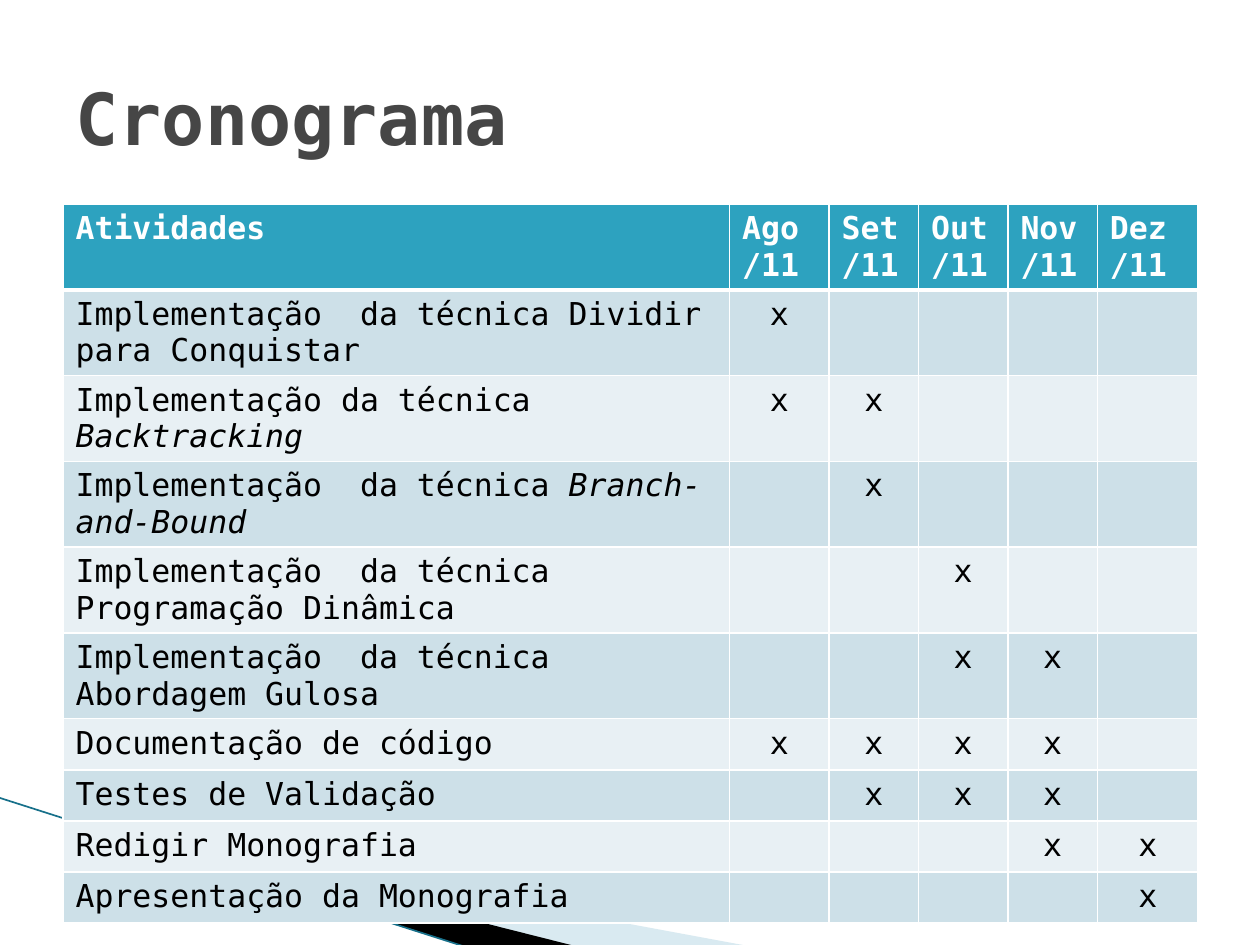
from lxml.etree import SubElement
from pptx import Presentation
from pptx.dml.color import RGBColor
from pptx.enum.shapes import MSO_CONNECTOR
from pptx.enum.text import MSO_ANCHOR, PP_ALIGN
from pptx.oxml.ns import qn
from pptx.util import Inches, Pt

FONT = "DejaVu Sans Mono"
WHITE, BLACK, GREY, TEAL = "FFFFFF", "000000", "464646", "2DA2BF"
BANDS = ["CDE0E8", "E8F0F4"]
MARGIN, CONTENT_WIDTH = 0.5, 9
COLUMN_WIDTHS = [5.29, 0.79, 0.71, 0.71, 0.71, 0.8]
ROW_HEIGHT = Pt(29.2)
MONTHS = ["Ago", "Set", "Out", "Nov", "Dez"]
ACTIVITIES = [
    ("Implementação  da técnica Dividir para Conquistar", "", ["Ago"]),
    ("Implementação da técnica ", "Backtracking", ["Ago", "Set"]),
    ("Implementação  da técnica ", "Branch-and-Bound", ["Set"]),
    ("Implementação  da técnica  Programação Dinâmica", "", ["Out"]),
    ("Implementação  da técnica  Abordagem Gulosa", "", ["Out", "Nov"]),
    ("Documentação de código", "", ["Ago", "Set", "Out", "Nov"]),
    ("Testes de Validação", "", ["Set", "Out", "Nov"]),
    ("Redigir Monografia", "", ["Nov", "Dez"]),
    ("Apresentação da Monografia", "", ["Dez"]),
]


def color(hex_value):
    """Turn a hex string into a colour."""
    return RGBColor.from_string(hex_value)


def format_font(font, size, hex_value, bold=False):
    """Apply the deck's typeface with a size, colour and weight."""
    font.name, font.size, font.bold = FONT, Pt(size), bold
    font.color.rgb = color(hex_value)


def add_wedge(slide, points, hex_value, alpha=100):
    """Draw a filled, unlined wedge through points given in inches."""
    start, *corners = [(Inches(x), Inches(y)) for x, y in points]
    builder = slide.shapes.build_freeform(*start)
    builder.add_line_segments(corners, close=True)
    wedge = builder.convert_to_shape()
    wedge.shadow.inherit = False
    wedge.line.fill.background()
    wedge.fill.solid()
    wedge.fill.fore_color.rgb = color(hex_value)
    if alpha < 100:
        solid = wedge._element.spPr.find(qn("a:solidFill"))
        SubElement(solid[0], qn("a:alpha"), val=str(alpha * 1000))


def add_corner_decoration(slide):
    """Draw the slanted wedges and the line of the lower left corner."""
    add_wedge(slide, [(0.55, 6.51), (5.95, 7.51), (4.56, 7.51), (0.55, 6.5)], "A0CBDC", 40)
    add_wedge(slide, [(0.53, 6.49), (4.57, 7.51), (3.72, 7.52), (0.54, 6.5)], BLACK)
    edge = slide.shapes.add_connector(
        MSO_CONNECTOR.STRAIGHT, Inches(-0.01), Inches(6.33), Inches(3.71), Inches(7.52))
    edge.line.color.rgb = color("17708A")
    edge.line.width = Pt(0.95)
    SubElement(edge._element.spPr, qn("a:effectLst"))


def add_title(slide, left, top, width, height):
    """Place and format the title placeholder."""
    title = slide.shapes.title
    title.left, title.top, title.width, title.height = map(Inches, (left, top, width, height))
    frame = title.text_frame
    frame.text = "Cronograma"
    frame.vertical_anchor = MSO_ANCHOR.MIDDLE
    frame.paragraphs[0].alignment = PP_ALIGN.LEFT
    format_font(frame.paragraphs[0].runs[0].font, 41, GREY, bold=True)


def style_cell(cell, fill, bottom=1, top=1):
    """Give a cell white borders and a solid fill."""
    properties = cell._tc.get_or_add_tcPr()
    for side, points in (("L", 1), ("R", 1), ("T", top), ("B", bottom)):
        border = SubElement(properties, qn(f"a:ln{side}"), w=str(Pt(points)))
        solid = SubElement(border, qn("a:solidFill"))
        SubElement(solid, qn("a:srgbClr"), val=WHITE)
    cell.fill.solid()
    cell.fill.fore_color.rgb = color(fill)


def write_cell(cell, text, hex_value, bold=False, italic_tail=""):
    """Write a cell's text, with an optional italic ending."""
    paragraph = cell.text_frame.paragraphs[0]
    paragraph.text = text
    if italic_tail:
        paragraph.add_run().text = italic_tail
        paragraph.runs[-1].font.italic = True
    for run in paragraph.runs:
        format_font(run.font, 18, hex_value, bold)
    return paragraph


def add_schedule(slide, left, top, width):
    """Build the table of activities by month."""
    row_count = len(ACTIVITIES) + 1
    schedule = slide.shapes.add_table(
        row_count, len(COLUMN_WIDTHS), Inches(left), Inches(top),
        Inches(width), ROW_HEIGHT * row_count).table
    for column, column_width in zip(schedule.columns, COLUMN_WIDTHS):
        column.width = Inches(column_width)
    for row in schedule.rows:
        row.height = ROW_HEIGHT

    headings = ["Atividades"] + [f"{month}/11" for month in MONTHS]
    for cell, heading in zip(schedule.rows[0].cells, headings):
        style_cell(cell, TEAL, bottom=3)
        write_cell(cell, heading, WHITE, bold=True)

    for index, (activity, italic_tail, active_months) in enumerate(ACTIVITIES):
        activity_cell, *month_cells = schedule.rows[index + 1].cells
        for cell in (activity_cell, *month_cells):
            style_cell(cell, BANDS[index % 2], top=3 if index == 0 else 1)
        write_cell(activity_cell, activity, BLACK, italic_tail=italic_tail)
        for month, cell in zip(MONTHS, month_cells):
            if month in active_months:
                write_cell(cell, "x", BLACK).alignment = PP_ALIGN.CENTER


def main():
    """Build and save the schedule slide."""
    deck = Presentation()
    deck.slide_width, deck.slide_height = Inches(10), Inches(7.5)
    slide = deck.slides.add_slide(deck.slide_layouts.get_by_name("Title Only"))
    add_corner_decoration(slide)
    add_schedule(slide, MARGIN, 1.62, CONTENT_WIDTH)
    add_title(slide, MARGIN, 0.3, CONTENT_WIDTH, 1.25)
    deck.save("out.pptx")


if __name__ == "__main__":
    main()
